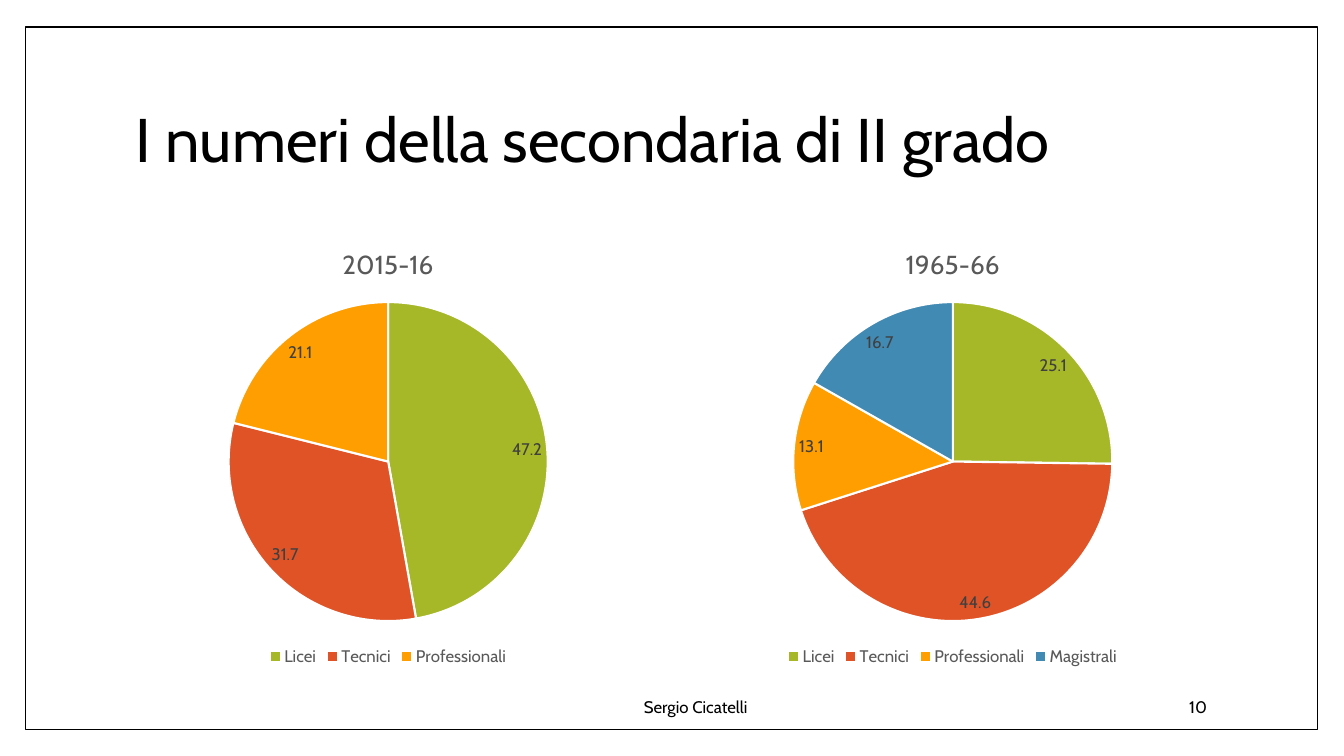
from pptx import Presentation
from pptx.chart.data import CategoryChartData
from pptx.dml.color import RGBColor
from pptx.enum import chart as charts, shapes, text
from pptx.util import Inches, Pt

FONT = "Cabin"
SLICES = {
    "Licei": "A6B727",
    "Tecnici": "DF5327",
    "Professionali": "FE9E00",
    "Magistrali": "418AB3",
}
PIES = {
    "2015-16": [47.2, 31.7, 21.1],
    "1965-66": [25.1, 44.6, 13.1, 16.7],
}


def color(value):
    return RGBColor.from_string(value)


def style_font(font, size, value="000000"):
    for name, setting in {"name": FONT, "size": Pt(size), "bold": False}.items():
        setattr(font, name, setting)
    font.color.rgb = color(value)


def add_frame(page):
    frame = page.shapes.add_shape(
        shapes.MSO_SHAPE.RECTANGLE,
        Inches(0.25), Inches(0.27), Inches(12.82), Inches(6.97),
    )
    frame.shadow.inherit = False
    frame.fill.solid()
    frame.fill.fore_color.rgb = color("FFFFFF")
    frame.line.color.rgb = color("000000")
    frame.line.width = Pt(1)


def add_text(page, wording, left, top, width, height, size, align, spacing=1.0):
    box = page.shapes.add_textbox(
        Inches(left), Inches(top), Inches(width), Inches(height)
    )
    box.text_frame.word_wrap = True
    box.text_frame.vertical_anchor = text.MSO_ANCHOR.MIDDLE
    para = box.text_frame.paragraphs[0]
    para.alignment = align
    para.line_spacing = spacing
    span = para.add_run()
    span.text = wording
    style_font(span.font, size)


def add_pie(page, title, values, left):
    data = CategoryChartData()
    data.categories = list(SLICES)[:len(values)]
    data.add_series("Series 1", values)
    chart = page.shapes.add_chart(
        charts.XL_CHART_TYPE.PIE,
        Inches(left), Inches(2.25), Inches(5.2), Inches(4.4), data,
    ).chart
    style_font(chart.font, 10)

    chart.has_title = True
    heading = chart.chart_title.text_frame
    heading.text = title
    style_font(heading.paragraphs[0].runs[0].font, 18.6, "595959")

    chart.has_legend = True
    chart.legend.position = charts.XL_LEGEND_POSITION.BOTTOM
    chart.legend.include_in_layout = False
    style_font(chart.legend.font, 12, "595959")

    plot = chart.plots[0]
    plot.vary_by_categories = True
    series = plot.series[0]
    for index, fill in enumerate(list(SLICES.values())[:len(values)]):
        wedge = series.points[index].format
        wedge.fill.solid()
        wedge.fill.fore_color.rgb = color(fill)
        wedge.line.color.rgb = color("FFFFFF")
        wedge.line.width = Pt(1.5)

    labels = series.data_labels
    options = {
        "show_value": True,
        "show_percentage": False,
        "position": charts.XL_LABEL_POSITION.BEST_FIT,
    }
    for name, setting in options.items():
        setattr(labels, name, setting)
    style_font(labels.font, 12, "404040")


def main():
    deck = Presentation()
    deck.slide_width = Inches(13.33)
    deck.slide_height = Inches(7.5)
    page = deck.slides.add_slide(deck.slide_layouts[6])

    add_frame(page)
    add_text(page, "I numeri della secondaria di II grado",
             1.25, 0.67, 10.8, 1.48, 44, text.PP_ALIGN.LEFT, 0.9)
    for column, (title, values) in enumerate(PIES.items()):
        add_pie(page, title, values, 1.25 + 5.6 * column)
    add_text(page, "Sergio Cicatelli", 4.32, 6.81, 5.16, 0.4, 12, text.PP_ALIGN.CENTER)
    add_text(page, "10", 10.2, 6.81, 1.87, 0.4, 12, text.PP_ALIGN.RIGHT)
    deck.save("out.pptx")


if __name__ == "__main__":
    main()
